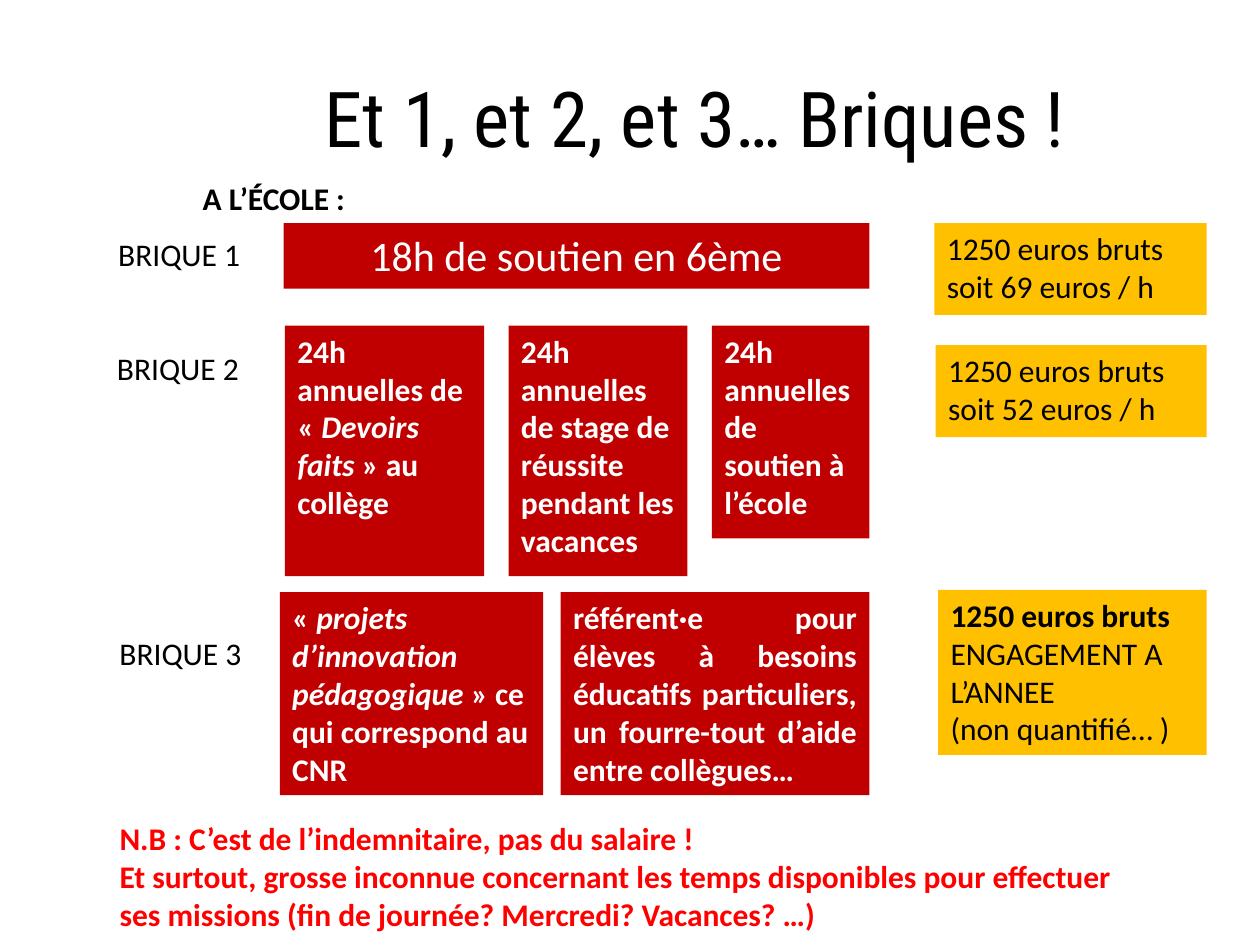
from pptx import Presentation
from pptx.dml.color import RGBColor
from pptx.enum.shapes import MSO_SHAPE
from pptx.enum.text import MSO_ANCHOR, PP_ALIGN
from pptx.util import Pt

RECT = MSO_SHAPE.RECTANGLE
TOP, MIDDLE = MSO_ANCHOR.TOP, MSO_ANCHOR.MIDDLE
LEFT, CENTER, JUSTIFY = PP_ALIGN.LEFT, PP_ALIGN.CENTER, PP_ALIGN.JUSTIFY

THEME = {
    "title_font": "Roboto Condensed", "body_font": "Calibri",
    "title_size": 44, "banner_size": 24, "body_size": 18,
    "black": "000000", "white": "FFFFFF", "alert": "FF0000",
    "brick": "C00000", "pay": "FFC000",
}

# Content: a text is a list of paragraphs, a paragraph a list of (words, style);
# style holds "b" for bold and "i" for italic
TITLE = [[("Et 1, et 2, et 3… Briques !", "")]]
PLACE = [[("A L’ÉCOLE :", "b")]]
NOTE = [
    [("N.B : C’est de l’indemnitaire, pas du salaire !", "b")],
    [("Et surtout, grosse inconnue concernant les temps disponibles pour effectuer "
      "ses missions (fin de journée? Mercredi? Vacances? …)", "b")],
]

# Each row: label (left, top), gap between bricks, bricks and pay box
ROWS = [
    {"label": "BRIQUE 1", "label_at": (60.5, 131), "top": 127.5, "gap": 0,
     "bricks": [
         {"width": 334.8, "height": 37.5, "align": CENTER, "size": THEME["banner_size"],
          "text": [[("18h de soutien en 6ème", "")]]}],
     "pay": {"top": 127.5, "width": 155.5, "height": 52.5,
             "text": [[("1250 euros bruts\nsoit 69 euros / h", "")]]}},
    {"label": "BRIQUE 2", "label_at": (59.75, 195.8), "top": 186, "gap": 14,
     "bricks": [
         {"width": 113.8, "height": 143.3,
          "text": [[("24h annuelles de «\u00a0", "b"), ("Devoirs faits", "bi"),
                    ("\u00a0» au collège", "b")]]},
         {"width": 102.2, "height": 143.3,
          "text": [[("24h annuelles de stage de réussite pendant les vacances", "b")]]},
         {"width": 90, "height": 121.7,
          "text": [[("24h annuelles de soutien à l’école", "b")]]}],
     "pay": {"top": 197.3, "width": 154.8, "height": 52.5,
             "text": [[("1250 euros bruts\nsoit 52 euros / h", "")]]}},
    {"label": "BRIQUE 3", "label_at": (61.2, 358.6), "top": 338.4, "gap": 10,
     "bricks": [
         {"width": 150.5, "height": 116,
          "text": [[("«\u00a0", "b"), ("projets d’innovation pédagogique ", "bi"),
                    ("» ce qui correspond au CNR", "b")]]},
         {"width": 176.4, "height": 116, "align": JUSTIFY,
          "text": [[("référent·e pour élèves à besoins éducatifs particuliers, "
                     "un fourre-tout d’aide entre collègues…", "b")]]}],
     "pay": {"top": 337, "width": 153.4, "height": 94.3,
             "text": [[("1250 euros bruts\n", "b"), ("ENGAGEMENT A L’ANNEE", "")],
                      [("(non quantifié… )", "")]]}},
]
BRICKS_RIGHT, PAY_RIGHT = 496.8, 689.5
LABEL_SIZE = (96.5, 30)


def write(frame, text, size=THEME["body_size"], color="black", font="body_font",
          align=LEFT, anchor=TOP):
    frame.word_wrap = True
    frame.vertical_anchor = anchor
    for index, parts in enumerate(text):
        paragraph = frame.add_paragraph() if index else frame.paragraphs[0]
        paragraph.alignment = align
        for words, style in parts:
            for number, line in enumerate(words.split("\n")):
                if number:
                    paragraph.add_line_break()
                if not line:
                    continue
                run = paragraph.add_run()
                run.text = line
                run.font.name = THEME[font]
                run.font.size = Pt(size)
                run.font.bold = "b" in style
                run.font.italic = "i" in style
                run.font.color.rgb = RGBColor.from_string(THEME[color])


def add_box(slide, left, top, width, height, text, fill=None, **text_format):
    place = [Pt(length) for length in (left, top, width, height)]
    if fill:
        box = slide.shapes.add_shape(RECT, *place)
        box.shadow.inherit = False
        box.fill.solid()
        box.fill.fore_color.rgb = RGBColor.from_string(THEME[fill])
        box.line.fill.background()
    else:
        box = slide.shapes.add_textbox(*place)
    write(box.text_frame, text, **text_format)


def main():
    deck = Presentation()
    deck.slide_width, deck.slide_height = Pt(720), Pt(540)
    slide = deck.slides.add_slide(deck.slide_layouts[5])

    # Title and subheading
    title = slide.shapes.title
    title.left, title.top, title.width, title.height = Pt(111), Pt(21.6), Pt(573), Pt(90)
    write(title.text_frame, TITLE, size=THEME["title_size"], font="title_font",
          align=CENTER, anchor=MIDDLE)
    add_box(slide, 108.7, 98.6, 201.6, 29, PLACE)

    # Rows: label, bricks ending on a shared right edge, pay box
    for row in ROWS:
        add_box(slide, *row["label_at"], *LABEL_SIZE, [[(row["label"], "")]])
        bricks, gap = row["bricks"], row["gap"]
        span = sum(brick["width"] for brick in bricks) + gap * (len(bricks) - 1)
        left = BRICKS_RIGHT - span
        for brick in bricks:
            add_box(slide, left, row["top"], brick["width"], brick["height"],
                    brick["text"], fill="brick", color="white",
                    size=brick.get("size", THEME["body_size"]),
                    align=brick.get("align", LEFT))
            left += brick["width"] + gap
        pay = row["pay"]
        add_box(slide, PAY_RIGHT - pay["width"], pay["top"], pay["width"],
                pay["height"], pay["text"], fill="pay")

    # Closing note
    add_box(slide, 61.2, 464.4, 601.2, 72.7, NOTE, color="alert")

    deck.save("out.pptx")


if __name__ == "__main__":
    main()
